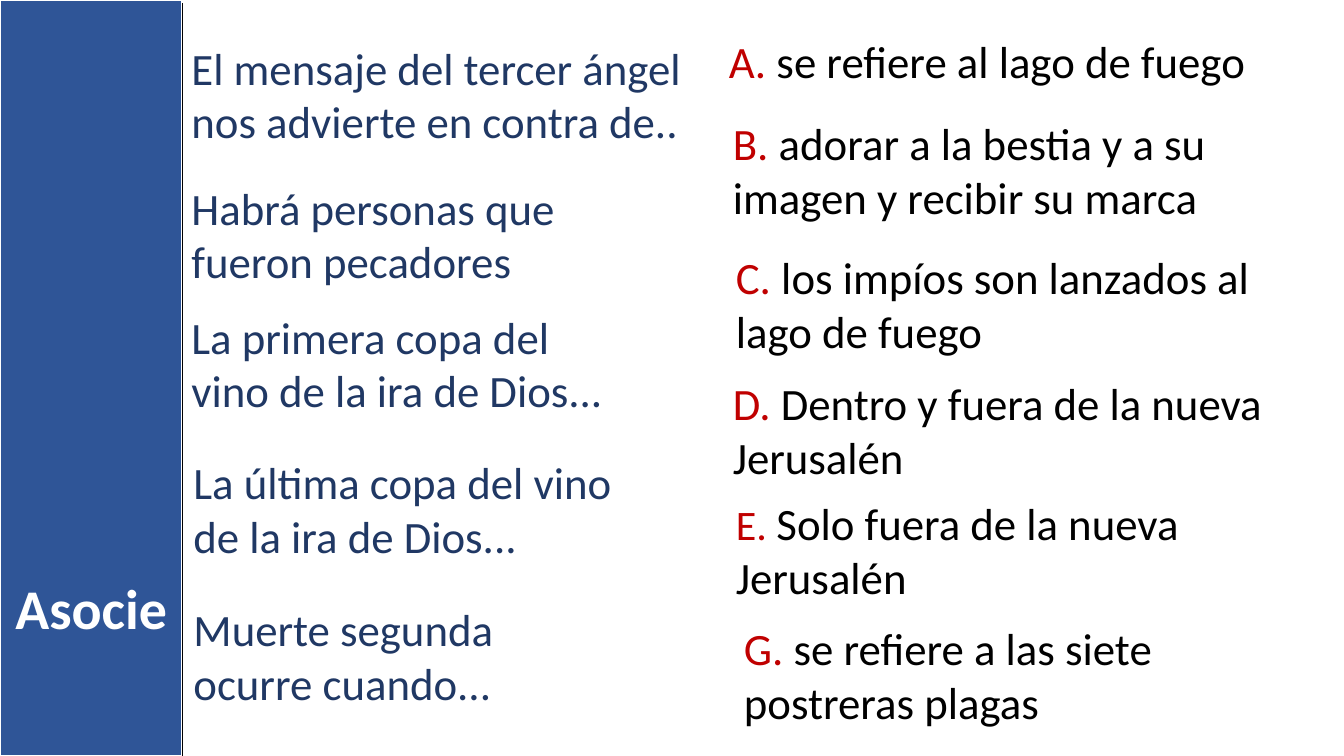
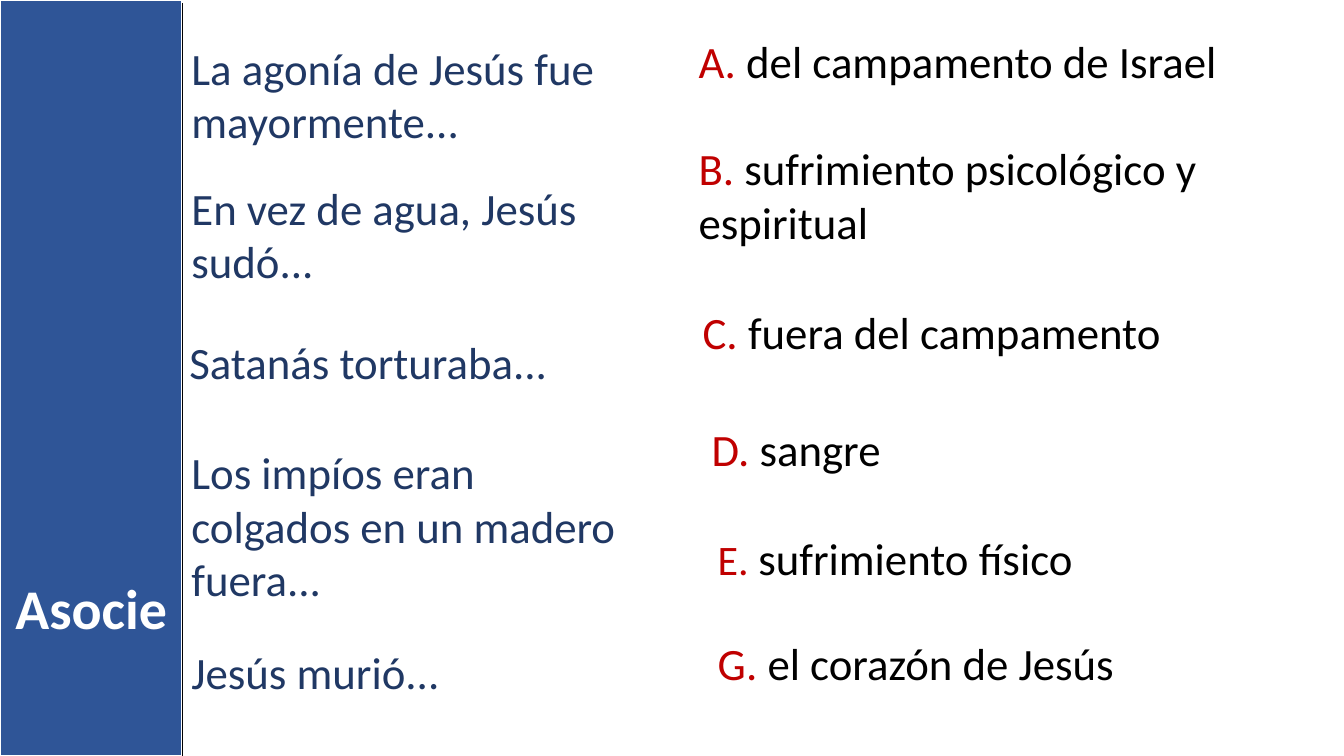
"""Build two matching-exercise slides with a shared side band and title."""
from pptx import Presentation
from pptx import util as u
from pptx.dml.color import RGBColor
from pptx.enum import shapes, text
from pptx.oxml.ns import qn
from lxml import etree

BLUE, NAVY, RED, BLACK, WHITE = "2F5597", "203864", "C00000", "000000", "FFFFFF"
FONT = "Calibri"
BAND_WIDTH = 1.81
TITLE = "Asocie"
LETTER_SIZES = {"E": 30}

EXERCISES = [
    {
        "prompts": [
            ("El mensaje del tercer ángel nos advierte en contra de..", 1.8, 0.35, 5.25, 2),
            ("Habrá personas que fueron pecadores", 1.8, 1.74, 4.62, 2),
            ("La primera copa del vino de la ira de Dios...", 1.8, 3.02, 4.43, 2),
            ("La última copa del vino de la ira de Dios...", 1.82, 4.46, 4.6, 2),
            ("Muerte segunda ocurre cuando...", 1.82, 5.92, 4.41, 2),
        ],
        "answers": [
            ("A", "se refiere al lago de fuego", 7.13, 0.29, 6.05, 1),
            ("B", "adorar a la bestia y a su imagen y recibir su marca", 7.17, 1.1, 5.92, 2),
            ("C", "los impíos son lanzados al lago de fuego", 7.2, 2.43, 5.74, 2),
            ("D", "Dentro y fuera de la nueva Jerusalén", 7.17, 3.68, 5.8, 2),
            ("E", "Solo fuera de la nueva Jerusalén", 7.2, 4.87, 5.53, 2),
            ("G", "se refiere a las siete postreras plagas", 7.28, 6.11, 5.59, 2),
        ],
    },
    {
        "prompts": [
            ("La agonía de Jesús fue mayormente...", 1.8, 0.35, 4.62, 2),
            ("En vez de agua, Jesús sudó...", 1.8, 1.74, 4.62, 2),
            ("Satanás torturaba...", 1.78, 3.27, 4.43, 1),
            ("Los impíos eran colgados en un madero fuera...", 1.8, 4.36, 4.6, 3),
            ("Jesús murió...", 1.8, 6.35, 4.41, 1),
        ],
        "answers": [
            ("A", "del campamento de Israel", 6.83, 0.29, 6.3, 1),
            ("B", "sufrimiento psicológico y espiritual", 6.83, 1.35, 6.16, 2),
            ("C", "fuera del campamento", 6.87, 2.97, 5.98, 1),
            ("D", "sangre", 6.96, 4.13, 6.04, 1),
            ("E", "sufrimiento físico", 7.02, 5.22, 5.75, 1),
            ("G", "el corazón de Jesús", 7.02, 6.26, 5.82, 1),
        ],
    },
]


def color(code):
    """Turn a hex string into a colour."""
    return RGBColor.from_string(code)


def add_span(para, words, size=32, fill=BLACK, bold=False):
    """Add formatted words to a paragraph."""
    span = para.add_run()
    span.text = words
    span.font.name = FONT
    span.font.size = u.Pt(size)
    span.font.bold = bold
    span.font.color.rgb = color(fill)


def add_box(page, left, top, width, lines):
    """Add a wrapping text box sized for its lines and return its paragraph."""
    height = 0.1 + 0.54 * lines
    box = page.shapes.add_textbox(*map(u.Inches, (left, top, width, height)))
    box.text_frame.word_wrap = True
    box.text_frame.auto_size = text.MSO_AUTO_SIZE.SHAPE_TO_FIT_TEXT
    return box.text_frame.paragraphs[0]


def add_frame(page, height):
    """Add the side band, its edge line and the title."""
    edge = u.Inches(BAND_WIDTH)
    band = page.shapes.add_shape(shapes.MSO_SHAPE.RECTANGLE, 0, 0, edge, height)
    band.shadow.inherit = False
    band.fill.solid()
    band.fill.fore_color.rgb = color(BLUE)
    band.line.color.rgb = color(WHITE)
    band.line.width = u.Pt(1.5)

    title = page.shapes.title
    title.element.addprevious(band.element)
    para = title.text_frame.paragraphs[0]
    para.alignment = text.PP_ALIGN.CENTER
    add_span(para, TITLE, size=40, fill=WHITE, bold=True)

    line = page.shapes.add_connector(
        shapes.MSO_CONNECTOR.STRAIGHT, edge, u.Inches(0.03), edge, height)
    line.line.color.rgb = color(BLACK)
    line.line.width = u.Pt(1)
    etree.SubElement(line.element.spPr, qn("a:effectLst"))


def add_exercise(page, prompts, answers):
    """Add the prompts on the left and the lettered answers on the right."""
    for words, *place in prompts:
        add_span(add_box(page, *place), words, fill=NAVY)
    for letter, words, *place in answers:
        para = add_box(page, *place)
        add_span(para, f"{letter}. ", size=LETTER_SIZES.get(letter, 32), fill=RED)
        add_span(para, words)


def main():
    """Build and save the deck."""
    deck = Presentation()
    deck.slide_width, deck.slide_height = u.Inches(13.33), u.Inches(7.5)
    layout = deck.slide_layouts.get_by_name("Title Only")
    heading = layout.placeholders[0]
    heading.left, heading.top = 0, u.Inches(5.64)
    heading.width, heading.height = u.Inches(BAND_WIDTH), u.Inches(0.77)
    for exercise in EXERCISES:
        page = deck.slides.add_slide(layout)
        add_frame(page, deck.slide_height)
        add_exercise(page, **exercise)
    deck.save("out.pptx")


if __name__ == "__main__":
    main()
